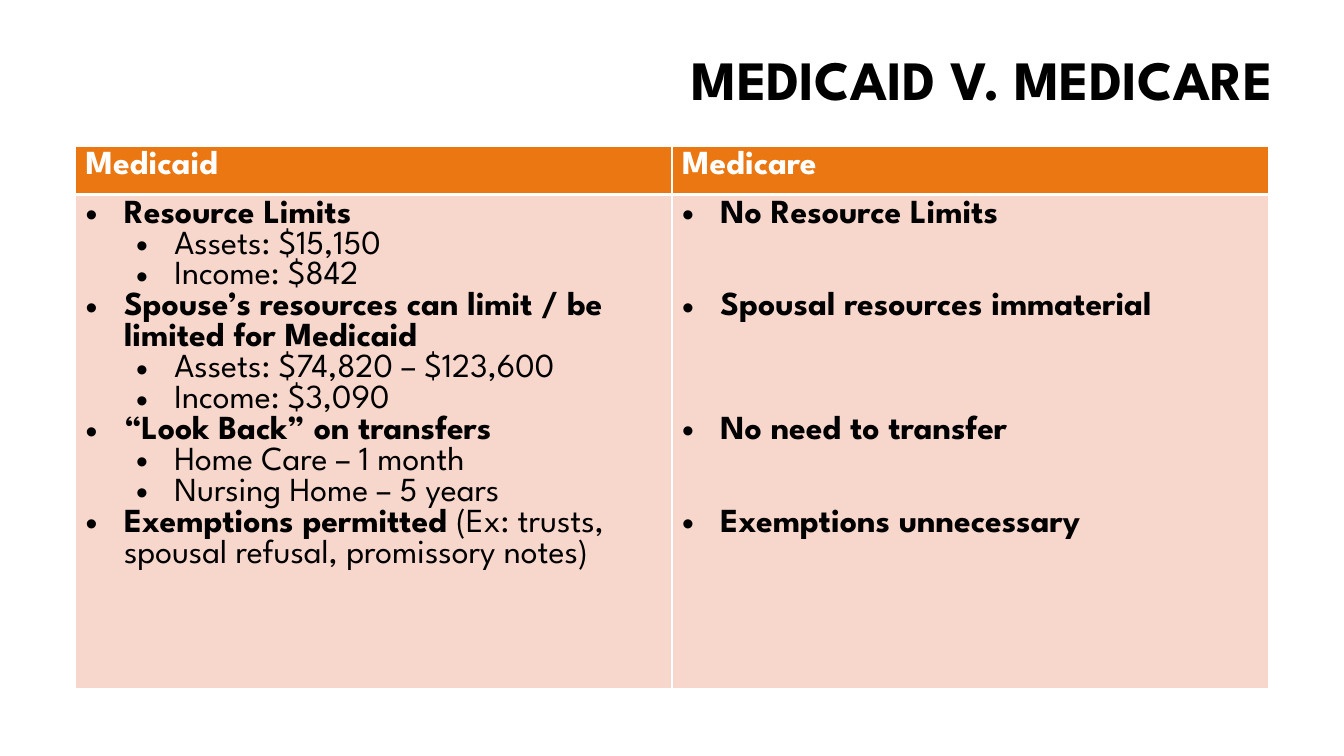
from lxml.etree import SubElement
from pptx import Presentation
from pptx.dml.color import RGBColor
from pptx.enum.text import MSO_ANCHOR, MSO_AUTO_SIZE, PP_ALIGN
from pptx.oxml.ns import qn
from pptx.util import Inches, Pt

BLACK = RGBColor(0x00, 0x00, 0x00)
WHITE = RGBColor(0xFF, 0xFF, 0xFF)
ORANGE = RGBColor(0xEB, 0x77, 0x12)
PEACH = RGBColor(0xF7, 0xD6, 0xCC)
FONT = "League Spartan"
TEXT_SIZE = 24
LINE_PITCH = TEXT_SIZE * 0.92

HEADERS = ["Medicaid", "Medicare"]
MEDICAID = [
    (0, 0, "Resource Limits", ""),
    (1, 0, "", "Assets: $15,150"),
    (1, 0, "", "Income: $842"),
    (0, 0, "Spouse’s resources can limit / be limited for Medicaid", ""),
    (1, 0, "", "Assets: $74,820 – $123,600"),
    (1, 0, "", "Income: $3,090"),
    (0, 0, "“Look Back” on transfers", ""),
    (1, 0, "", "Home Care – 1 month"),
    (1, 0, "", "Nursing Home – 5 years"),
    (0, 0, "Exemptions permitted ", "(Ex: trusts, spousal refusal, promissory notes)"),
]
MEDICARE = [
    (0, 0, "No Resource Limits", ""),
    (0, 2, "Spousal resources immaterial", ""),
    (0, 3, "No need to transfer", ""),
    (0, 2, "Exemptions unnecessary", ""),
]


def format_run(r, size, color, bold):
    r.font.name = FONT
    r.font.size = Pt(size)
    r.font.color.rgb = color
    r.font.bold = bold


def add_title(s, left, top, width, height):
    sp = s.shapes.title
    sp.left, sp.top, sp.width, sp.height = map(Inches, (left, top, width, height))
    tf = sp.text_frame
    tf.text = "MEDICAID V. MEDICARE"
    tf.word_wrap = True
    tf.auto_size = MSO_AUTO_SIZE.NONE
    tf.vertical_anchor = MSO_ANCHOR.MIDDLE
    tf.margin_bottom = Inches(0.5)
    p = tf.paragraphs[0]
    p.alignment = PP_ALIGN.RIGHT
    p.line_spacing = 0.9
    format_run(p.runs[0], 39.6, BLACK, True)


def style_cell(cell, fill, top, bottom):
    tc_pr = cell._tc.get_or_add_tcPr()
    for side, width in (("L", 1), ("R", 1), ("T", top), ("B", bottom)):
        ln = SubElement(tc_pr, qn(f"a:ln{side}"), w=str(Pt(width)))
        SubElement(SubElement(ln, qn("a:solidFill")), qn("a:srgbClr"), val=str(WHITE))
    cell.fill.solid()
    cell.fill.fore_color.rgb = fill


def fill_bullets(tf, items):
    for i, (level, gap, strong, plain) in enumerate(items):
        p = tf.paragraphs[0] if i == 0 else tf.add_paragraph()
        p.level = level
        p_pr = p._p.get_or_add_pPr()
        p_pr.set("marL", str(Inches(0.38 + 0.5 * level)))
        p_pr.set("indent", str(Inches(-0.38)))
        SubElement(p_pr, qn("a:buFont"), typeface="Arial")
        SubElement(p_pr, qn("a:buChar"), char="•")
        if gap:
            p.space_before = Pt(round(gap * LINE_PITCH, 2))
        for text, bold in ((strong, True), (plain, False)):
            if text:
                r = p.add_run()
                r.text = text
                format_run(r, TEXT_SIZE, BLACK, bold)


def add_comparison(s, left, top, width, header_height, body_height):
    box = map(Inches, (left, top, width, header_height + body_height))
    table = s.shapes.add_table(2, 2, *box).table
    table.rows[0].height = Inches(header_height)
    table.rows[1].height = Inches(body_height)
    for col, (header, items) in enumerate(zip(HEADERS, (MEDICAID, MEDICARE))):
        head, body = table.cell(0, col), table.cell(1, col)
        style_cell(head, ORANGE, 1, 3)
        style_cell(body, PEACH, 3, 1)
        head.text_frame.text = header
        format_run(head.text_frame.paragraphs[0].runs[0], TEXT_SIZE, WHITE, True)
        fill_bullets(body.text_frame, items)


def main():
    prs = Presentation()
    prs.slide_width, prs.slide_height = Inches(13.33), Inches(7.5)
    s = prs.slides.add_slide(prs.slide_layouts[5])
    s.background.fill.solid()
    s.background.fill.fore_color.rgb = WHITE
    add_title(s, 3.4, 0.65, 9.33, 0.79)
    add_comparison(s, 0.75, 1.45, 11.83, 0.48, 4.9)
    prs.save("out.pptx")


if __name__ == "__main__":
    main()
